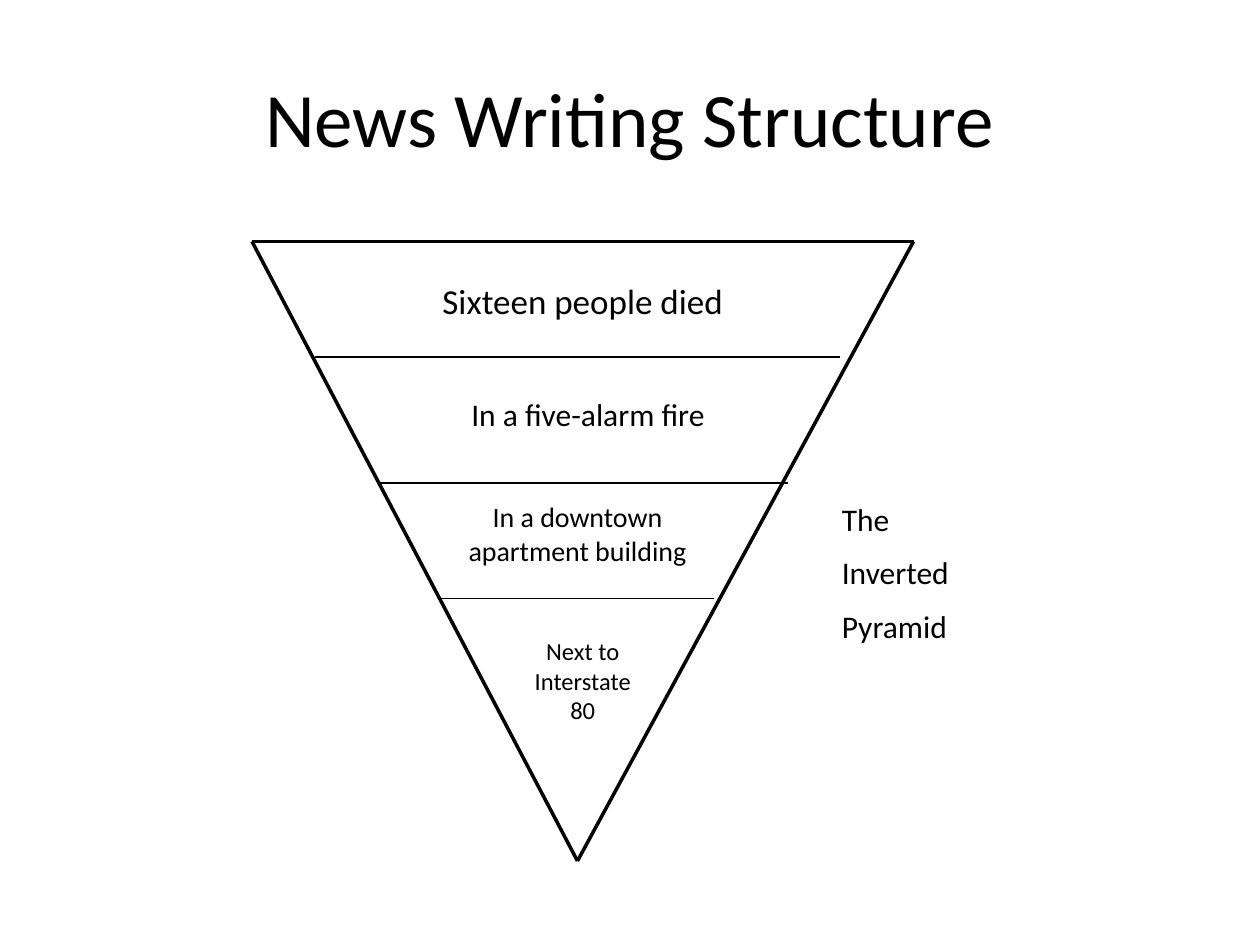
from dataclasses import dataclass

from lxml import etree
from pptx import Presentation
from pptx import util as u
from pptx.dml.color import RGBColor
from pptx.enum import shapes, text
from pptx.oxml.ns import qn

COLOURS = {"ink": "000000", "paper": "FFFFFF"}
FONT = "Calibri"
EDGE, DIVIDER = 2, 0.75  # line widths


@dataclass
class Line:
    start: tuple[float, float]
    end: tuple[float, float]
    width: float


@dataclass
class Label:
    lines: list[str]
    left: float
    top: float
    width: float
    height: float
    size: float
    align: text.PP_ALIGN = text.PP_ALIGN.CENTER
    anchor: text.MSO_ANCHOR = text.MSO_ANCHOR.TOP


def draw_line(page, line: Line) -> None:
    points = [u.Pt(value) for value in (*line.start, *line.end)]
    connector = page.shapes.add_connector(shapes.MSO_CONNECTOR.STRAIGHT, *points)
    connector.line.width = u.Pt(line.width)
    connector.line.color.rgb = RGBColor.from_string(COLOURS["ink"])
    etree.SubElement(connector._element.spPr, qn("a:effectLst"))


def draw_label(page, label: Label) -> None:
    bounds = (label.left, label.top, label.width, label.height)
    box = page.shapes.add_textbox(*[u.Pt(value) for value in bounds])
    frame = box.text_frame
    frame.word_wrap = True
    frame.vertical_anchor = label.anchor
    for index, words in enumerate(label.lines):
        para = frame.add_paragraph() if index else frame.paragraphs[0]
        para.text = words
        para.alignment = label.align
        para.space_before = u.Pt(label.size / 2 if index else 0)
        para.font.name = FONT
        para.font.size = u.Pt(label.size)
        para.font.color.rgb = RGBColor.from_string(COLOURS["ink"])


# Pyramid corners
TOP_LEFT, TOP_RIGHT, TIP = (144, 138), (522, 138), (330, 492)

LINES = [
    Line(TOP_LEFT, TOP_RIGHT, EDGE),
    Line(TOP_LEFT, TIP, EDGE),
    Line(TOP_RIGHT, TIP, EDGE),
] + [
    Line((left, y), (right, y), DIVIDER)
    for left, right, y in [(180, 480, 204), (216, 450, 276), (252, 408, 342)]
]

LABELS = [
    # Title
    Label(["News Writing Structure"], 36, 21.6, 648, 90, 44,
          anchor=text.MSO_ANCHOR.MIDDLE),
    # Pyramid layers, from most to least important
    Label(["Sixteen people died"], 192, 156, 282, 31, 20),
    Label(["In a five-alarm fire"], 234, 222, 204, 29, 18),
    Label(["In a downtown apartment building"], 246, 282, 168, 46, 16),
    Label(["Next to Interstate 80"], 294, 360, 78, 58, 14),
    # Caption
    Label(["The", "Inverted", "Pyramid"], 474, 282, 180, 122, 18,
          align=text.PP_ALIGN.LEFT),
]


def main() -> None:
    deck = Presentation()
    deck.slide_width, deck.slide_height = u.Pt(720), u.Pt(540)
    page = deck.slides.add_slide(deck.slide_layouts[6])
    page.background.fill.solid()
    page.background.fill.fore_color.rgb = RGBColor.from_string(COLOURS["paper"])

    for line in LINES:
        draw_line(page, line)
    for label in LABELS:
        draw_label(page, label)

    deck.save("out.pptx")


if __name__ == "__main__":
    main()
